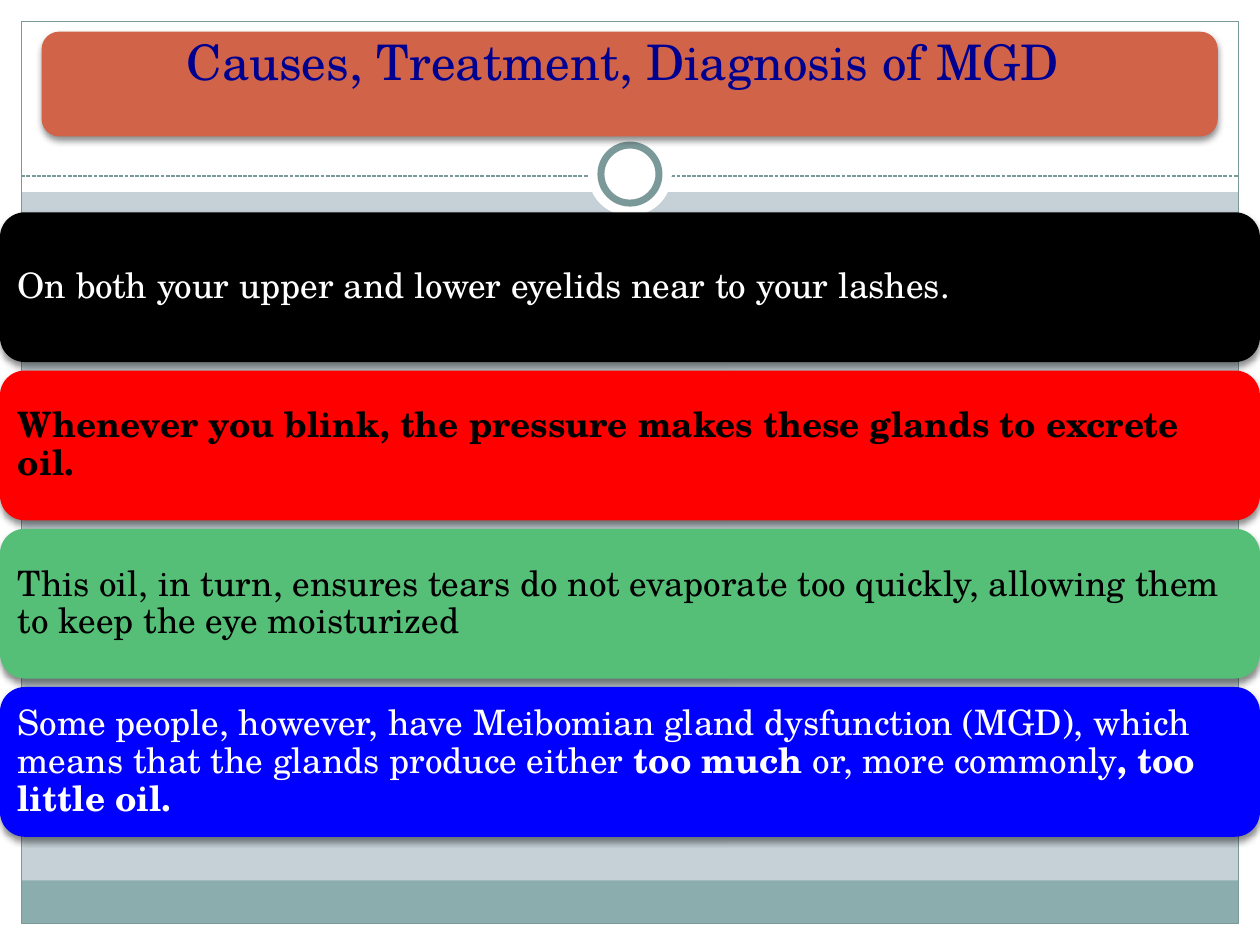
from dataclasses import dataclass

from lxml.etree import SubElement
from pptx import Presentation
from pptx.dml.color import RGBColor
from pptx.enum.dml import MSO_LINE_DASH_STYLE as Dash
from pptx.enum.shapes import MSO_CONNECTOR as Connector
from pptx.enum.shapes import MSO_SHAPE as Preset
from pptx.enum.text import MSO_ANCHOR as Anchor
from pptx.enum.text import PP_ALIGN as Align
from pptx.oxml.ns import qn
from pptx.util import Cm, Pt


@dataclass(frozen=True)
class Theme:
    font: str = "TeX Gyre Schola"
    title_size: float = 28
    body_size: float = 20
    thin_line: float = 0.75
    ring_line: float = 4
    background: str = "C5D1D7"
    white: str = "FFFFFF"
    black: str = "000000"
    footer: str = "8CADAE"
    frame: str = "7C999A"
    title_fill: str = "D16349"
    title_text: str = "000090"
    red: str = "FF0000"
    green: str = "56BF77"
    blue: str = "0000FF"


THEME = Theme()
WIDTH, HEIGHT = 25.4, 19.05
MARGIN = 0.43
CARD_TOP, CARD_HEIGHT, CARD_PITCH = 4.28, 3.02, 3.19

CARDS = [
    (THEME.black, THEME.white,
     [("On both your upper and lower eyelids near to your lashes.", False)]),
    (THEME.red, THEME.black,
     [("Whenever you blink, the pressure makes these glands to excrete oil.", True)]),
    (THEME.green, THEME.black,
     [("This oil, in turn, ensures tears do not evaporate too quickly, "
       "allowing them to keep the eye moisturized", False)]),
    (THEME.blue, THEME.white,
     [("Some people, however, have Meibomian gland dysfunction (MGD), "
       "which means that the glands produce either ", False),
      ("too much ", True),
      ("or, more commonly", False),
      (", too little oil.", True)]),
]


def apply_format(target, values):
    for name, value in values.items():
        setattr(target, name, value)


def style_line(line, color, width):
    line.color.rgb = RGBColor.from_string(color)
    line.width = Pt(width)


def add_panel(slide, preset, box, fill=None, line=None, line_width=THEME.thin_line):
    shape = slide.shapes.add_shape(preset, *map(Cm, box))
    shape.shadow.inherit = False
    if fill:
        shape.fill.solid()
        shape.fill.fore_color.rgb = RGBColor.from_string(fill)
    else:
        shape.fill.background()
    if line:
        style_line(shape.line, line, line_width)
    else:
        shape.line.fill.background()
    return shape


def add_dashed_rule(slide, y):
    rule = slide.shapes.add_connector(
        Connector.STRAIGHT, Cm(MARGIN), Cm(y), Cm(WIDTH - MARGIN), Cm(y))
    style_line(rule.line, THEME.frame, THEME.thin_line)
    rule.line.dash_style = Dash.SQUARE_DOT
    SubElement(rule._element.spPr, qn("a:effectLst"))


def add_soft_shadow(shape):
    effects = shape._element.spPr.find(qn("a:effectLst"))
    shadow = SubElement(effects, qn("a:outerShdw"), blurRad=str(Pt(4)),
                        dist=str(Pt(2)), dir="5400000", rotWithShape="0")
    color = SubElement(shadow, qn("a:srgbClr"), val=THEME.black)
    SubElement(color, qn("a:alpha"), val="45000")


def add_card(slide, box, fill, color, runs, size, align, frame_format):
    shape = add_panel(slide, Preset.ROUNDED_RECTANGLE, box, fill)
    add_soft_shadow(shape)
    apply_format(shape.text_frame, {"word_wrap": True, **frame_format})
    paragraph = shape.text_frame.paragraphs[0]
    apply_format(paragraph, {"alignment": align, "line_spacing": 0.9})
    for text, bold in runs:
        run = paragraph.add_run()
        run.text = text
        apply_format(run.font, {"name": THEME.font, "size": Pt(size), "bold": bold})
        run.font.color.rgb = RGBColor.from_string(color)


def add_backdrop(slide):
    slide.background.fill.solid()
    slide.background.fill.fore_color.rgb = RGBColor.from_string(THEME.background)
    inner_width, inner_height = WIDTH - 2 * MARGIN, HEIGHT - 2 * MARGIN
    for box in [
        (0, HEIGHT - MARGIN, WIDTH, MARGIN),
        (0, 0, WIDTH, 3.87),
        (0, 0, MARGIN, HEIGHT),
        (WIDTH - MARGIN, 0, MARGIN, HEIGHT),
    ]:
        add_panel(slide, Preset.RECTANGLE, box, THEME.white)
    add_panel(slide, Preset.RECTANGLE, (MARGIN, 17.75, inner_width, 0.87), THEME.footer)
    add_panel(slide, Preset.RECTANGLE, (MARGIN, MARGIN, inner_width, inner_height),
              line=THEME.frame)
    add_dashed_rule(slide, 3.55)
    for diameter, line in [(1.69, None), (1.17, THEME.frame)]:
        box = ((WIDTH - diameter) / 2, 3.51 - diameter / 2, diameter, diameter)
        add_panel(slide, Preset.OVAL, box, THEME.white, line, THEME.ring_line)


def add_title(slide):
    frame_format = {"vertical_anchor": Anchor.TOP, "margin_top": Cm(0.03),
                    "margin_left": Cm(0.3), "margin_right": Cm(0.58)}
    add_card(slide, (0.84, 0.64, 23.71, 2.11), THEME.title_fill, THEME.title_text,
             [("Causes, Treatment, Diagnosis of MGD", False)],
             THEME.title_size, Align.CENTER, frame_format)


def add_cards(slide):
    frame_format = {"vertical_anchor": Anchor.MIDDLE}
    for side in ("left", "right", "top", "bottom"):
        frame_format[f"margin_{side}"] = Cm(0.21)
    for index, (fill, color, runs) in enumerate(CARDS):
        box = (0, CARD_TOP + index * CARD_PITCH, WIDTH, CARD_HEIGHT)
        add_card(slide, box, fill, color, runs, THEME.body_size, Align.LEFT, frame_format)


def main():
    presentation = Presentation()
    apply_format(presentation, {"slide_width": Cm(WIDTH), "slide_height": Cm(HEIGHT)})
    slide = presentation.slides.add_slide(presentation.slide_layouts[6])
    add_backdrop(slide)
    add_title(slide)
    add_cards(slide)
    presentation.save("out.pptx")


if __name__ == "__main__":
    main()
